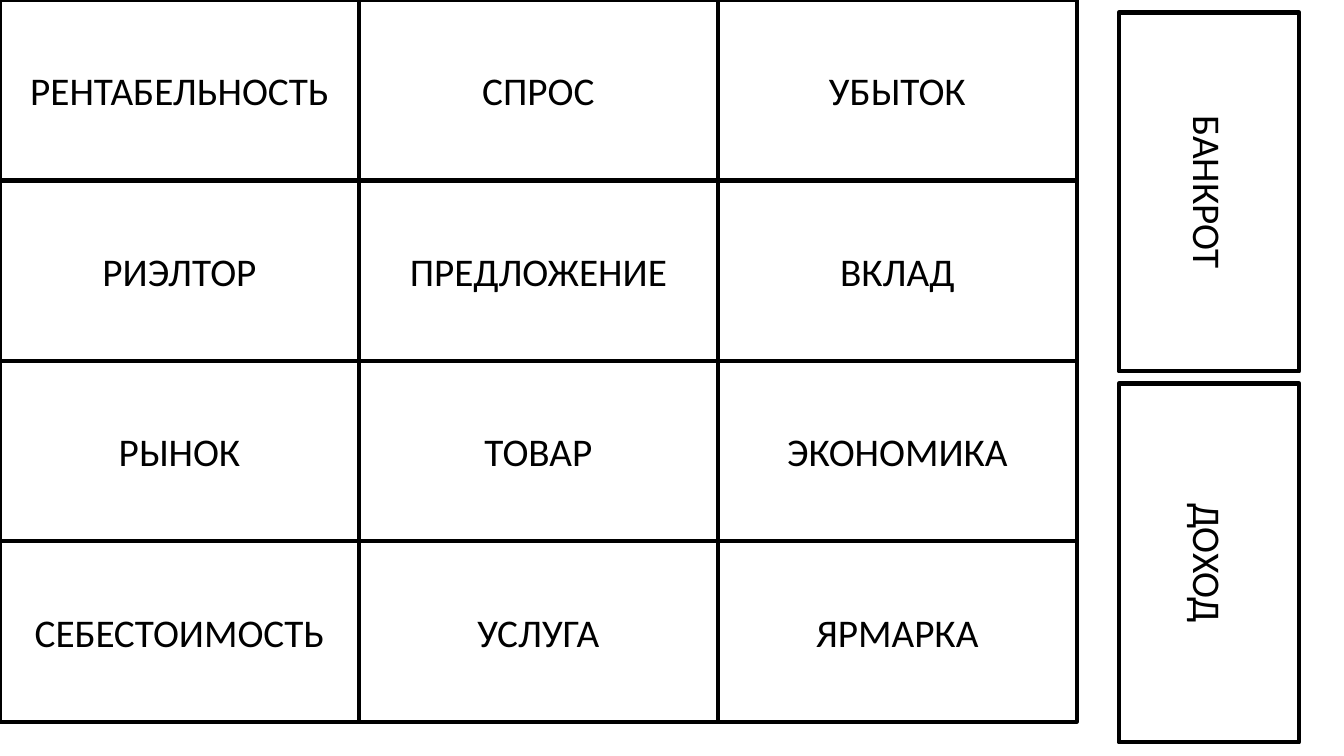
from dataclasses import dataclass

from pptx import Presentation
from pptx.dml.color import RGBColor
from pptx.enum.shapes import MSO_SHAPE
from pptx.enum.text import MSO_ANCHOR, PP_ALIGN
from pptx.slide import Slide
from pptx.util import Inches, Pt

RECTANGLE = MSO_SHAPE.RECTANGLE
MIDDLE = MSO_ANCHOR.MIDDLE
CENTER = PP_ALIGN.CENTER
BLACK = RGBColor(0x00, 0x00, 0x00)

COLUMN = 3.56
ROW = 1.79
SIDE_LEFT = 10.21
SIDE_TOP = 1.01
SIDE_STEP = 3.68

FONT = {"name": "Calibri", "size": Pt(28)}
FRAME = {"word_wrap": True, "vertical_anchor": MIDDLE}

GRID_WORDS = (
    ("РЕНТАБЕЛЬНОСТЬ", "РИЭЛТОР", "РЫНОК", "СЕБЕСТОИМОСТЬ"),
    ("СПРОС", "ПРЕДЛОЖЕНИЕ", "ТОВАР", "УСЛУГА"),
    ("УБЫТОК", "ВКЛАД", "ЭКОНОМИКА", "ЯРМАРКА"),
)
SIDE_WORDS = ("БАНКРОТ", "ДОХОД")


@dataclass(frozen=True)
class Card:
    word: str
    left: float
    top: float
    rotation: float = 0


def word_cards() -> list[Card]:
    grid = [
        Card(word, column * COLUMN, row * ROW)
        for column, words in enumerate(GRID_WORDS)
        for row, word in enumerate(words)
    ]
    side = [
        Card(word, SIDE_LEFT, SIDE_TOP + i * SIDE_STEP, 90)
        for i, word in enumerate(SIDE_WORDS)
    ]
    return grid + side


def draw_card(s: Slide, card: Card) -> None:
    sp = s.shapes.add_shape(
        RECTANGLE, Inches(card.left), Inches(card.top), Inches(COLUMN), Inches(ROW)
    )
    sp.rotation = card.rotation
    sp.shadow.inherit = False
    sp.fill.background()
    sp.line.color.rgb = BLACK
    sp.line.width = Pt(3)
    tf = sp.text_frame
    for name, value in FRAME.items():
        setattr(tf, name, value)
    p = tf.paragraphs[0]
    p.alignment = CENTER
    r = p.add_run()
    r.text = card.word
    for name, value in FONT.items():
        setattr(r.font, name, value)
    r.font.color.rgb = BLACK


def main() -> None:
    prs = Presentation()
    prs.slide_width = Inches(13.33)
    prs.slide_height = Inches(7.5)
    s = prs.slides.add_slide(prs.slide_layouts[6])
    for card in word_cards():
        draw_card(s, card)
    prs.save("out.pptx")


if __name__ == "__main__":
    main()
